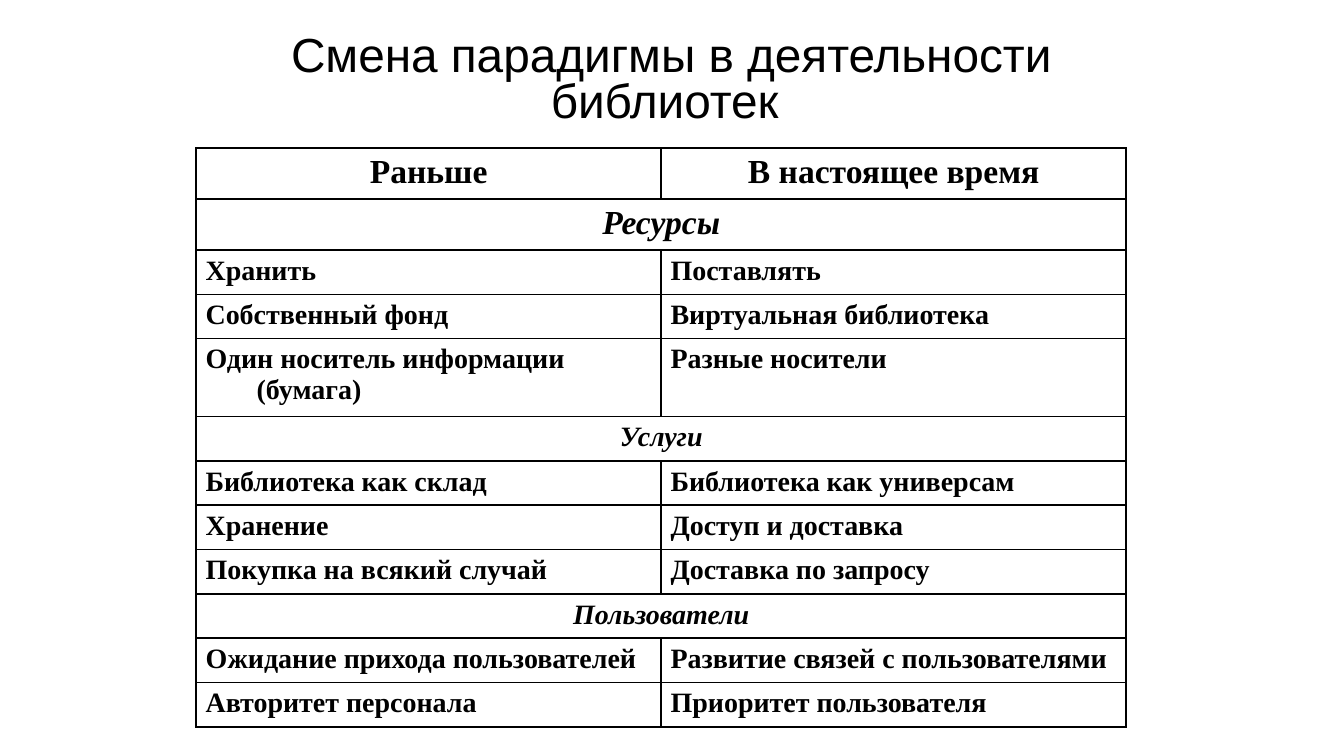
from lxml import etree
from pptx import Presentation
from pptx.dml.color import RGBColor
from pptx.enum.text import MSO_ANCHOR, PP_ALIGN
from pptx.oxml.ns import qn
from pptx.util import Inches, Pt

CENTER, LEFT = PP_ALIGN.CENTER, PP_ALIGN.LEFT
MIDDLE, TOP = MSO_ANCHOR.MIDDLE, MSO_ANCHOR.TOP
BLACK = "000000"
HANGING = Inches(0.38)
TABLE_HEIGHT = 4.27

# One text in a row makes a section heading across both columns.
ROWS = [
    ("Раньше", "В настоящее время"),
    ("Ресурсы",),
    ("Хранить", "Поставлять"),
    ("Собственный фонд", "Виртуальная библиотека"),
    ("Один носитель информации (бумага)", "Разные носители"),
    ("Услуги",),
    ("Библиотека как склад", "Библиотека как универсам"),
    ("Хранение", "Доступ и доставка"),
    ("Покупка на всякий случай", "Доставка по запросу"),
    ("Пользователи",),
    ("Ожидание прихода пользователей", "Развитие связей с пользователями"),
    ("Авторитет персонала", "Приоритет пользователя"),
]
# Relative heights, scaled to fill the table.
HEIGHTS = [0.38, 0.38, 0.33, 0.33, 0.58] + [0.33] * 7


def write(frame, text, align, color=BLACK, **font_format):
    para = frame.paragraphs[0]
    para.alignment = align
    span = para.add_run()
    span.text = text
    span.font.color.rgb = RGBColor.from_string(color)
    for name, value in font_format.items():
        setattr(span.font, name, value)
    return para


def add_borders(cell, color=BLACK):
    properties = cell._tc.get_or_add_tcPr()
    for side in ("lnL", "lnR", "lnT", "lnB"):
        line = etree.SubElement(properties, qn(f"a:{side}"), w=str(Pt(1)))
        fill = etree.SubElement(line, qn("a:solidFill"))
        etree.SubElement(fill, qn("a:srgbClr"), val=color)


deck = Presentation()
deck.slide_width = Inches(10)
deck.slide_height = deck.slide_width * 9 // 16
page = deck.slides.add_slide(deck.slide_layouts[6])

title = page.shapes.add_textbox(Inches(1.62), Inches(0.23), Inches(6.75), Inches(0.75))
title.text_frame.word_wrap = True
title.text_frame.vertical_anchor = MIDDLE
para = write(title.text_frame, "Смена парадигмы в деятельности библиотек ", CENTER,
             name="Arial", size=Pt(25.6))
para.line_spacing = 0.8

table = page.shapes.add_table(len(ROWS), 2, Inches(1.46), Inches(1.1),
                              Inches(6.92), Inches(TABLE_HEIGHT)).table
table.first_row = table.horz_banding = False
cell_format = {
    "margin_left": Inches(0.07), "margin_right": Inches(0.07),
    "margin_top": Inches(0.04), "margin_bottom": Inches(0.04),
    "vertical_anchor": TOP,
}

for row, (texts, height) in enumerate(zip(ROWS, HEIGHTS)):
    table.rows[row].height = Inches(height * TABLE_HEIGHT / sum(HEIGHTS))
    is_section = len(texts) == 1
    for column in range(2):
        cell = table.cell(row, column)
        add_borders(cell)
        cell.fill.background()
        for name, value in cell_format.items():
            setattr(cell, name, value)
    if is_section:
        table.cell(row, 0).merge(table.cell(row, 1))
    for column, text in enumerate(texts):
        para = write(table.cell(row, column).text_frame, text,
                     CENTER if is_section or row == 0 else LEFT,
                     name="Times New Roman", size=Pt(18 if row < 2 else 15),
                     bold=True, italic=is_section)
        indents = para._p.get_or_add_pPr()
        indents.set("marL", str(HANGING))
        indents.set("indent", str(-HANGING))

deck.save("out.pptx")
